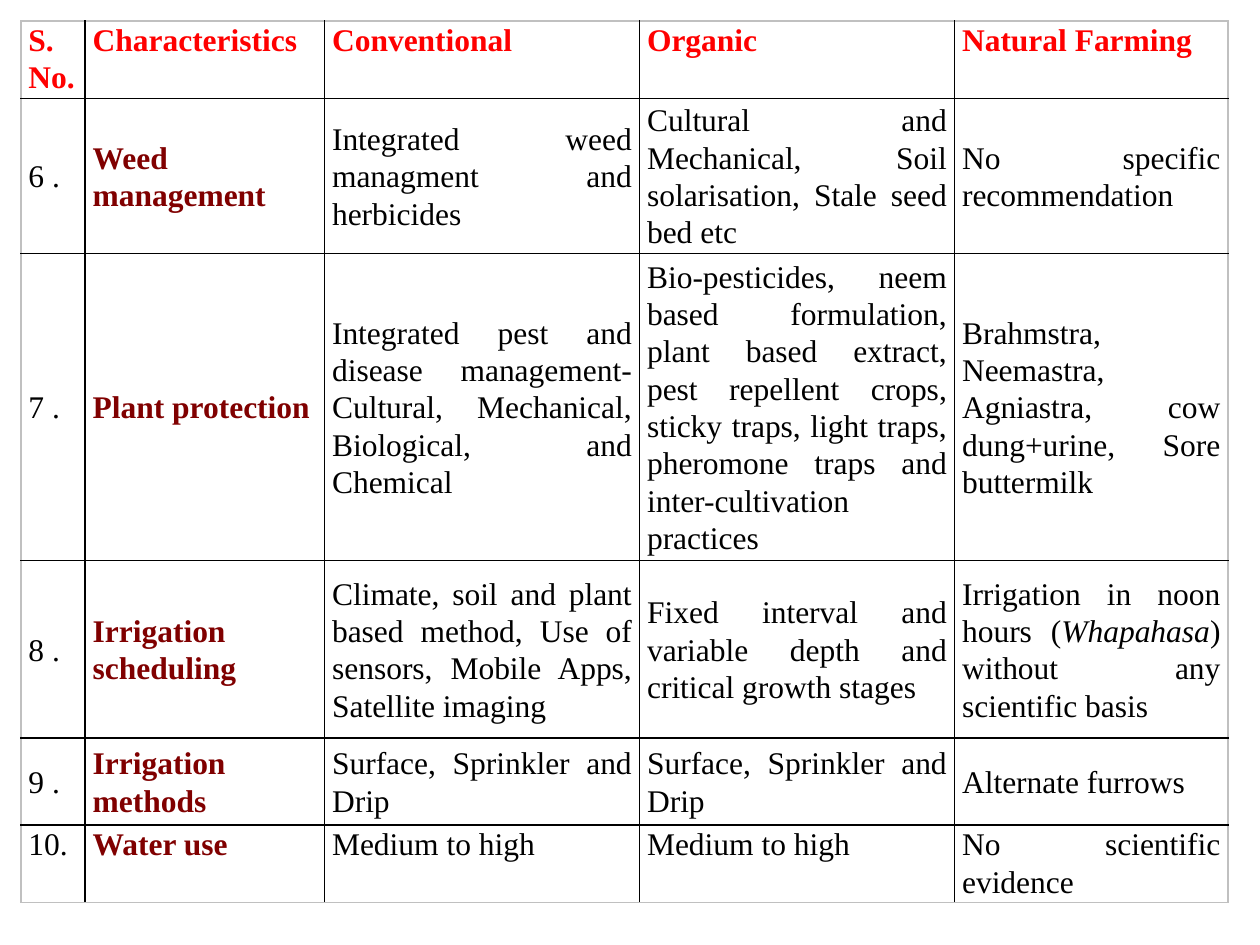
from lxml import etree
from pptx import Presentation
from pptx.dml.color import RGBColor
from pptx.enum import text
from pptx.oxml import ns
from pptx.util import Pt

COLORS = {"header": "FF0000", "topic": "800000", "body": "000000",
          "inner": "000000", "outer": "C0C0C0"}
COLUMN_WIDTHS = [36.7, 136.8, 180, 180, 156.3]
ROW_HEIGHTS = [44.3, 88.5, 175.5, 101.5, 49.8, 44.3]
CELL_FORMAT = {"margin_left": Pt(4.3), "margin_right": Pt(4.3),
               "margin_top": 0, "margin_bottom": 0}
PARAGRAPH_FORMAT = {"alignment": text.PP_ALIGN.JUSTIFY, "line_spacing": 1.07,
                    "space_after": Pt(8)}

# Text between asterisks is italic.
ROWS = [
    ["S. No.", "Characteristics", "Conventional", "Organic", "Natural Farming"],
    ["6 .", "Weed management",
     "Integrated weed managment and herbicides",
     "Cultural and Mechanical, Soil solarisation, Stale seed bed etc",
     "No specific recommendation"],
    ["7 .", "Plant protection",
     "Integrated pest and disease management- Cultural, Mechanical, "
     "Biological, and Chemical",
     "Bio-pesticides, neem based formulation, plant based extract, "
     "pest repellent crops, sticky traps, light traps, pheromone traps "
     "and inter-cultivation practices",
     "Brahmstra, Neemastra, Agniastra, cow dung+urine, Sore buttermilk"],
    ["8 .", "Irrigation scheduling",
     "Climate, soil and plant based method, Use of sensors, Mobile Apps, "
     "Satellite imaging",
     "Fixed interval and variable depth and critical growth stages",
     "Irrigation in noon hours (*Whapahasa*) without any scientific basis"],
    ["9 .", "Irrigation methods", "Surface, Sprinkler and Drip",
     "Surface, Sprinkler and Drip", "Alternate furrows"],
    ["10.", "Water use", "Medium to high", "Medium to high",
     "No scientific evidence"],
]


def set_borders(cell, outer_sides):
    """Draw all four borders, with the outer colour on the table's edges."""
    properties = cell._tc.get_or_add_tcPr()
    for index, side in enumerate("LRTB"):
        line = etree.Element(ns.qn(f"a:ln{side}"), w=str(Pt(1)))
        fill = etree.SubElement(line, ns.qn("a:solidFill"))
        color = COLORS["outer" if side in outer_sides else "inner"]
        etree.SubElement(fill, ns.qn("a:srgbClr"), val=color)
        properties.insert(index, line)


presentation = Presentation()
presentation.slide_width, presentation.slide_height = Pt(720), Pt(540)
slide = presentation.slides.add_slide(presentation.slide_layouts[6])

last_row, last_column = len(ROW_HEIGHTS) - 1, len(COLUMN_WIDTHS) - 1
table = slide.shapes.add_table(
    len(ROW_HEIGHTS), len(COLUMN_WIDTHS), Pt(12), Pt(12),
    Pt(sum(COLUMN_WIDTHS)), Pt(sum(ROW_HEIGHTS))).table
table.first_row = table.horz_banding = False
for column, width in zip(table.columns, COLUMN_WIDTHS):
    column.width = Pt(width)
for row, height in zip(table.rows, ROW_HEIGHTS):
    row.height = Pt(height)

for row_index, row_texts in enumerate(ROWS):
    for column_index, cell_text in enumerate(row_texts):
        cell = table.cell(row_index, column_index)
        for name, value in CELL_FORMAT.items():
            setattr(cell, name, value)
        cell.vertical_anchor = (text.MSO_ANCHOR.TOP if row_index in (0, last_row)
                                else text.MSO_ANCHOR.MIDDLE)
        cell.fill.background()
        edges = {"L": column_index == 0, "R": column_index == last_column,
                 "T": row_index == 0, "B": row_index == last_row}
        set_borders(cell, [side for side, is_outer in edges.items() if is_outer])

        role = ("header" if row_index == 0
                else "topic" if column_index == 1 else "body")
        paragraph = cell.text_frame.paragraphs[0]
        for name, value in PARAGRAPH_FORMAT.items():
            setattr(paragraph, name, value)
        for part_index, part in enumerate(cell_text.split("*")):
            run = paragraph.add_run()
            run.text = part
            run_format = {"name": "Times New Roman", "size": Pt(18),
                          "bold": role != "body", "italic": part_index % 2 == 1}
            for name, value in run_format.items():
                setattr(run.font, name, value)
            run.font.color.rgb = RGBColor.from_string(COLORS[role])

presentation.save("out.pptx")
